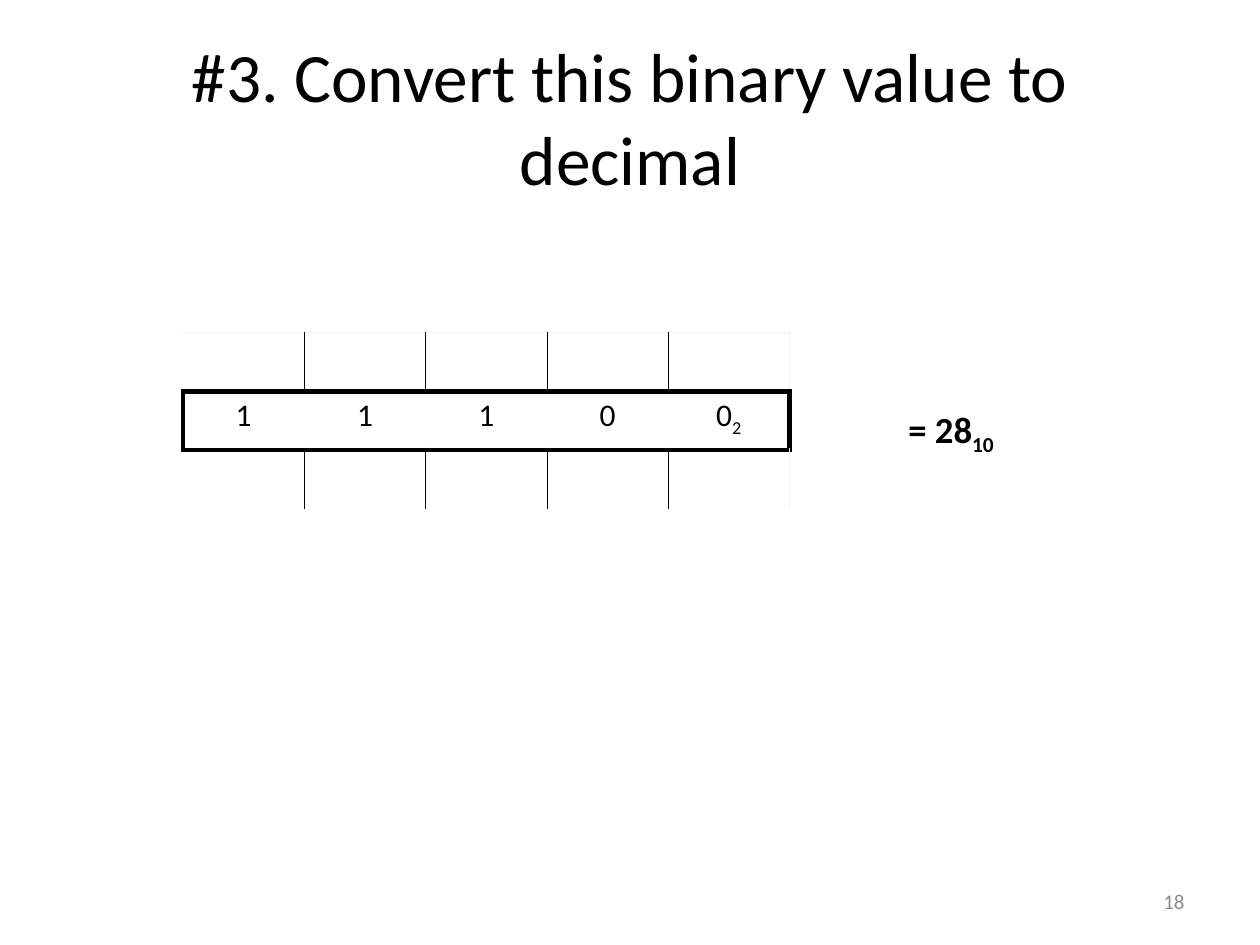
"""Build a slide that converts a five-bit binary value to decimal."""
from dataclasses import dataclass

import lxml.etree
import pptx
import pptx.dml.color
import pptx.enum.text
import pptx.oxml.ns
import pptx.util

Pt = pptx.util.Pt
Align = pptx.enum.text.PP_ALIGN
Anchor = pptx.enum.text.MSO_ANCHOR
qn = pptx.oxml.ns.qn

BITS = "11100"
ROWS, COLS = 3, len(BITS) + 1
THICK, THIN = ("000000", 3), ("000000", 0.25)
PALE, WHITE = ("F2F2F2", 0.25), ("FFFFFF", 0.25)
PLAIN = "{2D5ABB26-0587-4C30-8999-92F81FD0307C}"


@dataclass
class Label:
    text: str
    box: tuple
    size: float
    sub: str = ""
    color: str = "000000"
    bold: bool = False
    align: Align = Align.LEFT
    anchor: Anchor = Anchor.TOP


LABELS = [
    Label("#3. Convert this binary value to decimal", (36, 21.6, 648, 90), 39.6,
          align=Align.CENTER, anchor=Anchor.MIDDLE),
    Label("= 28", (512, 229, 70, 32.4), 21, sub="10", bold=True),
    Label("18", (516, 500.5, 168, 28.75), 12, color="8C8C8C",
          align=Align.RIGHT, anchor=Anchor.MIDDLE),
]


def tint(code: str) -> pptx.dml.color.RGBColor:
    return pptx.dml.color.RGBColor.from_string(code)


def write(frame, text: str, *, size: float, sub: str = "", color: str = "000000",
          bold: bool = False, align: Align = Align.CENTER) -> None:
    line = frame.paragraphs[0]
    line.alignment = align
    for part in filter(None, (text, sub)):
        run = line.add_run()
        run.text = part
        run.font.name, run.font.size, run.font.bold = "Calibri", Pt(size), bold
        run.font.color.rgb = tint(color)
    if sub:
        run._r.get_or_add_rPr().set("baseline", "-25000")


def draw(slide, item: Label) -> None:
    frame = slide.shapes.add_textbox(*map(Pt, item.box)).text_frame
    frame.word_wrap = True
    frame.vertical_anchor = item.anchor
    write(frame, item.text, size=item.size, sub=item.sub, color=item.color,
          bold=item.bold, align=item.align)


def edges(row: int, col: int) -> dict:
    if col == 0:
        return {"R": THICK} if row == 1 else {}
    last = col == COLS - 1
    if row == 1:
        sides = {"T": THICK, "B": THICK}
        if col == 1:
            sides["L"] = THICK
        if last:
            sides["R"] = THICK
        return sides
    sides = {"R": PALE if last else THIN}
    if col > 1:
        sides["L"] = THIN
    sides["T"], sides["B"] = (PALE, THICK) if row == 0 else (THICK, WHITE)
    return sides


def rule(cell, sides: dict) -> None:
    props = cell._tc.get_or_add_tcPr()
    for spot, side in enumerate("LRTB"):
        line = lxml.etree.Element(qn(f"a:ln{side}"))
        props.insert(spot, line)
        if side in sides:
            color, width = sides[side]
            line.set("w", str(Pt(width)))
            fill = lxml.etree.SubElement(line, qn("a:solidFill"))
            lxml.etree.SubElement(fill, qn("a:srgbClr"), val=color)
        else:
            lxml.etree.SubElement(line, qn("a:noFill"))


def grid(slide) -> None:
    shape = slide.shapes.add_table(ROWS, COLS, Pt(35.3), Pt(190), Pt(416), Pt(100.8))
    table = shape.table
    table.first_row = table.horz_banding = False
    table._tbl.tblPr.find(qn("a:tableStyleId")).text = PLAIN
    for row in range(ROWS):
        for col in range(COLS):
            cell = table.cell(row, col)
            cell.margin_left = cell.margin_right = Pt(5)
            cell.margin_top = cell.margin_bottom = Pt(2.9)
            cell.fill.background()
            rule(cell, edges(row, col))
            if row == 1 and col > 0:
                write(cell.text_frame, BITS[col - 1], size=18,
                      sub="2" if col == COLS - 1 else "")


def main() -> None:
    deck = pptx.Presentation()
    deck.slide_width, deck.slide_height = Pt(720), Pt(540)
    slide = deck.slides.add_slide(deck.slide_layouts[6])
    grid(slide)
    for item in LABELS:
        draw(slide, item)
    deck.save("out.pptx")


if __name__ == "__main__":
    main()
